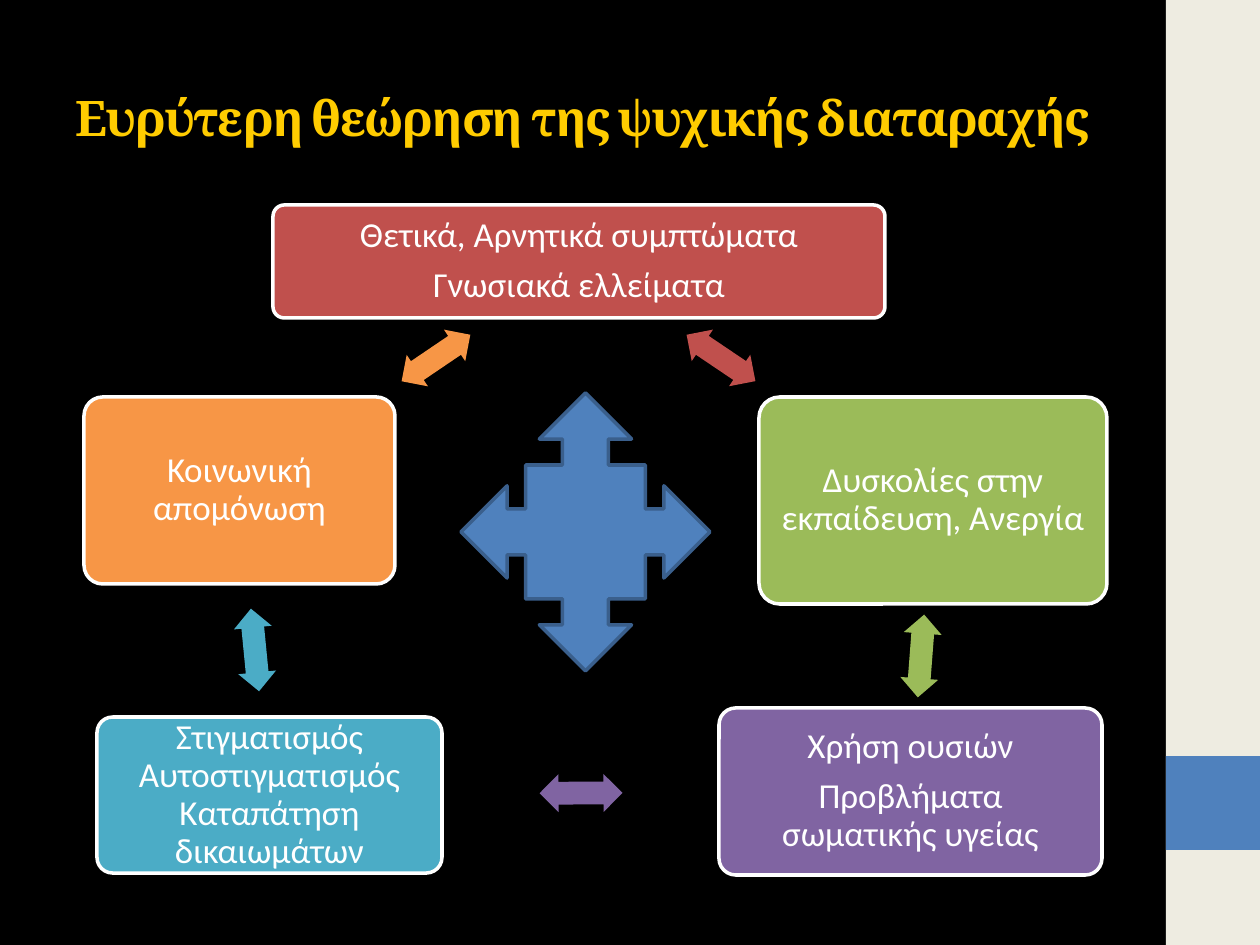
from dataclasses import dataclass

from pptx import Presentation
from pptx.dml.color import RGBColor
from pptx.enum.shapes import MSO_SHAPE as Shape
from pptx.enum.text import MSO_ANCHOR as Anchor, PP_ALIGN as Align
from pptx.util import Emu, Pt

EMU_PER_PX = 914400 / 126


@dataclass(frozen=True)
class Theme:
    background: str = "000000"
    sidebar: str = "EEECE1"
    title: str = "FFCC00"
    white: str = "FFFFFF"
    blue: str = "4F81BD"
    dark_blue: str = "3A5F8C"
    red: str = "C0504D"
    green: str = "9BBB59"
    purple: str = "8064A2"
    teal: str = "4BACC6"
    orange: str = "F79646"
    title_font: str = "Cambria"
    body_font: str = "Calibri"
    title_size: int = 28
    body_size: int = 20
    outline: int = 2


def px(length):
    return Emu(round(length * EMU_PER_PX))


def rgb(color):
    return RGBColor.from_string(color)


def write(frame, lines, *, font, size, color, bold=False, align=Align.LEFT,
          line_spacing=1.0, space_after=0, tracking=0):
    frame.word_wrap = True
    frame.vertical_anchor = Anchor.MIDDLE
    for index, line in enumerate(lines):
        para = frame.paragraphs[0] if index == 0 else frame.add_paragraph()
        para.alignment = align
        para.line_spacing = line_spacing
        para.space_after = Pt(space_after)
        span = para.add_run()
        span.text = line
        span.font.name = font
        span.font.size = Pt(size)
        span.font.bold = bold
        span.font.color.rgb = rgb(color)
        if tracking:
            span.font._element.set("spc", str(tracking * 100))


class SlideBuilder:
    def __init__(self, page, theme):
        self.page = page
        self.theme = theme
        fill = page.background.fill
        fill.solid()
        fill.fore_color.rgb = rgb(theme.background)

    def shape(self, kind, bounds, color, line=None, adjustments=()):
        box = self.page.shapes.add_shape(kind, *map(px, bounds))
        box.shadow.inherit = False
        box.fill.solid()
        box.fill.fore_color.rgb = rgb(color)
        if line:
            box.line.color.rgb = rgb(line)
            box.line.width = Pt(self.theme.outline)
        else:
            box.line.fill.background()
        for index, value in enumerate(adjustments):
            box.adjustments[index] = value
        return box

    def title(self, bounds, text):
        theme = self.theme
        box = self.page.shapes.add_textbox(*map(px, bounds))
        write(box.text_frame, [text], font=theme.title_font, size=theme.title_size,
              color=theme.title, bold=True, tracking=-1)

    def card(self, bounds, color, lines):
        theme = self.theme
        box = self.shape(Shape.ROUNDED_RECTANGLE, bounds, color, theme.white, [0.1])
        frame = box.text_frame
        frame.margin_left = frame.margin_right = px(15)
        frame.margin_top = frame.margin_bottom = px(14)
        write(frame, lines, font=theme.body_font, size=theme.body_size,
              color=theme.white, align=Align.CENTER, line_spacing=0.9,
              space_after=theme.body_size * 0.35)

    def double_arrow(self, center, angle, color):
        width, height = 83, 38
        bounds = center[0] - width / 2, center[1] - height / 2, width, height
        arrow = self.shape(Shape.LEFT_RIGHT_ARROW, bounds, color, adjustments=[0.6, 0.5])
        arrow.rotation = angle


def main():
    deck = Presentation()
    deck.slide_width, deck.slide_height = px(1260), px(945)
    theme = Theme()
    builder = SlideBuilder(deck.slides.add_slide(deck.slide_layouts[6]), theme)

    builder.shape(Shape.RECTANGLE, (1166, 0, 94, 945), theme.sidebar)
    builder.shape(Shape.RECTANGLE, (1166, 756, 94, 94), theme.blue)
    builder.title((63, 38, 1050, 157), "Ευρύτερη θεώρηση της ψυχικής διαταραχής")

    cycle = [
        (theme.red, (273, 205, 612, 113),
         ["Θετικά, Αρνητικά συμπτώματα", "Γνωσιακά ελλείματα"], (721, 358), 34),
        (theme.green, (759, 397, 348, 207),
         ["Δυσκολίες στην εκπαίδευση, Ανεργία"], (921, 656), 94.4),
        (theme.purple, (719, 708, 383, 167),
         ["Χρήση ουσιών", "Προβλήματα σωματικής υγείας"], (581, 793), 179.7),
        (theme.teal, (97, 717, 345, 156),
         ["Στιγματισμός Αυτοστιγματισμός Καταπάτηση δικαιωμάτων"], (255, 650), 264.4),
        (theme.orange, (84, 397, 311, 187),
         ["Κοινωνική απομόνωση"], (436, 358), 325.9),
    ]
    for color, bounds, lines, arrow_center, angle in cycle:
        builder.card(bounds, color, lines)
        builder.double_arrow(arrow_center, angle, color)

    builder.shape(Shape.QUAD_ARROW_CALLOUT, (461, 393, 249, 278),
                  theme.blue, theme.dark_blue)
    deck.save("out.pptx")


if __name__ == "__main__":
    main()
